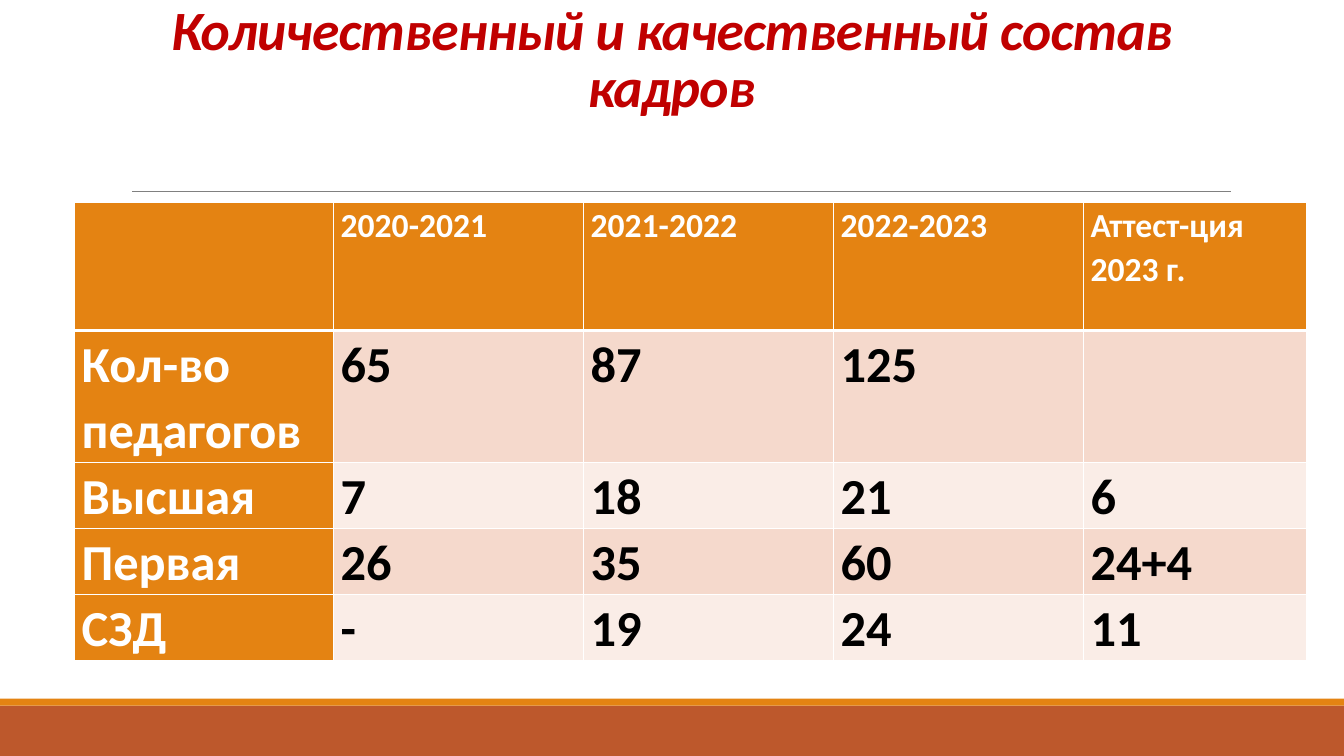
from dataclasses import dataclass

from lxml import etree
from pptx import Presentation
from pptx.dml.color import RGBColor
from pptx.enum.shapes import MSO_CONNECTOR, MSO_SHAPE
from pptx.enum.text import MSO_ANCHOR, MSO_AUTO_SIZE, PP_ALIGN
from pptx.oxml.ns import qn
from pptx.util import Inches, Pt

RECT = MSO_SHAPE.RECTANGLE
STRAIGHT = MSO_CONNECTOR.STRAIGHT
BOTTOM = MSO_ANCHOR.BOTTOM
NO_FIT = MSO_AUTO_SIZE.NONE
LEFT, CENTER = PP_ALIGN.LEFT, PP_ALIGN.CENTER
WIDTH, HEIGHT = Inches(13.33), Inches(7.5)


@dataclass(frozen=True)
class Theme:
    font: str = "Calibri"
    orange: str = "E48312"
    rust: str = "BD582C"
    red: str = "C00000"
    gray: str = "808080"
    white: str = "FFFFFF"
    black: str = "000000"
    bands: tuple = ("F5D9CC", "FAEDE7")
    title: float = 39.6
    head: int = 24
    body: int = 36


THEME = Theme()
# Column widths and row heights in percent of the slide's width and height
COLS = (19.28, 18.6, 18.6, 18.6, 16.58)
ROWS = (16.93, 16.93, 8.27, 8.27, 8.27)
STAFF = (
    ("", "2020-2021", "2021-2022", "2022-2023", "Аттест-ция 2023 г."),
    ("Кол-во педагогов", "65", "87", "125", ""),
    ("Высшая", "7", "18", "21", "6"),
    ("Первая", "26", "35", "60", "24+4"),
    ("СЗД", "-", "19", "24", "11"),
)


def across(share):
    """Length from a percentage of the slide's width."""
    return round(WIDTH * share / 100)


def down(share):
    """Length from a percentage of the slide's height."""
    return round(HEIGHT * share / 100)


def box(left, top, width, height):
    return across(left), down(top), across(width), down(height)


def rgb(code):
    return RGBColor.from_string(code)


def write(frame, text, size, color, align=LEFT, italic=False, line=1.0,
          after=0, track=0):
    """Put one bold paragraph into a text frame."""
    para = frame.paragraphs[0]
    para.alignment = align
    para.line_spacing = line
    para.space_before = Pt(0)
    para.space_after = Pt(after)
    run = para.add_run()
    run.text = text
    font = run.font
    font.name, font.size = THEME.font, Pt(size)
    font.bold, font.italic = True, italic
    font.color.rgb = rgb(color)
    if track:
        font._element.set("spc", str(track))


def add_band(slide, place, color):
    band = slide.shapes.add_shape(RECT, *place)
    band.shadow.inherit = False
    band.fill.solid()
    band.fill.fore_color.rgb = rgb(color)
    band.line.fill.background()


def add_rule(slide, left, right, top):
    rule = slide.shapes.add_connector(
        STRAIGHT, across(left), down(top), across(right), down(top))
    rule.line.color.rgb = rgb(THEME.gray)
    rule.line.width = Pt(0.5)
    etree.SubElement(rule._element.spPr, qn("a:effectLst"))


def add_title(slide, text):
    title = slide.shapes.title
    title.left, title.top, title.width, title.height = box(6.9, 6.4, 86.12, 18.27)
    frame = title.text_frame
    frame.word_wrap = True
    frame.auto_size = NO_FIT
    frame.vertical_anchor = BOTTOM
    frame.margin_bottom = down(9)
    write(frame, text, THEME.title, THEME.red, align=CENTER, italic=True,
          line=0.85, track=-50)


def edge(cell, low):
    """Draw white borders round a cell, the lower one `low` points wide."""
    props = cell._tc.get_or_add_tcPr()
    for spot, (side, width) in enumerate(
            (("L", 1), ("R", 1), ("T", 1), ("B", low))):
        line = etree.Element(qn("a:ln" + side), w=str(Pt(width)))
        fill = etree.SubElement(line, qn("a:solidFill"))
        etree.SubElement(fill, qn("a:srgbClr"), val=THEME.white)
        props.insert(spot, line)


def fill_cell(cell, text, row, col):
    head = row == 0
    label = head or col == 0
    cell.fill.solid()
    cell.fill.fore_color.rgb = rgb(
        THEME.orange if label else THEME.bands[(row - 1) % 2])
    edge(cell, 3 if head else 1)
    cell.margin_left = cell.margin_right = Inches(0.07)
    cell.margin_top = cell.margin_bottom = 0
    if text:
        write(cell.text_frame, text, THEME.head if head else THEME.body,
              THEME.white if label else THEME.black, line=1.07, after=8)


def add_staff(slide):
    place = box(5.55, 26.8, sum(COLS), sum(ROWS))
    table = slide.shapes.add_table(len(ROWS), len(COLS), *place).table
    for col, share in zip(table.columns, COLS):
        col.width = across(share)
    for row, share in zip(table.rows, ROWS):
        row.height = down(share)
    for row, texts in enumerate(STAFF):
        for col, text in enumerate(texts):
            fill_cell(table.cell(row, col), text, row, col)


def main():
    deck = Presentation()
    deck.slide_width, deck.slide_height = WIDTH, HEIGHT
    slide = deck.slides.add_slide(deck.slide_layouts.get_by_name("Title Only"))
    add_band(slide, box(0, 93.33, 100, 6.67), THEME.rust)
    add_band(slide, box(0, 92.4, 100, 0.93), THEME.orange)
    add_rule(slide, 9.83, 91.6, 25.33)
    add_title(slide, "Количественный и качественный состав кадров")
    add_staff(slide)
    deck.save("out.pptx")


if __name__ == "__main__":
    main()
